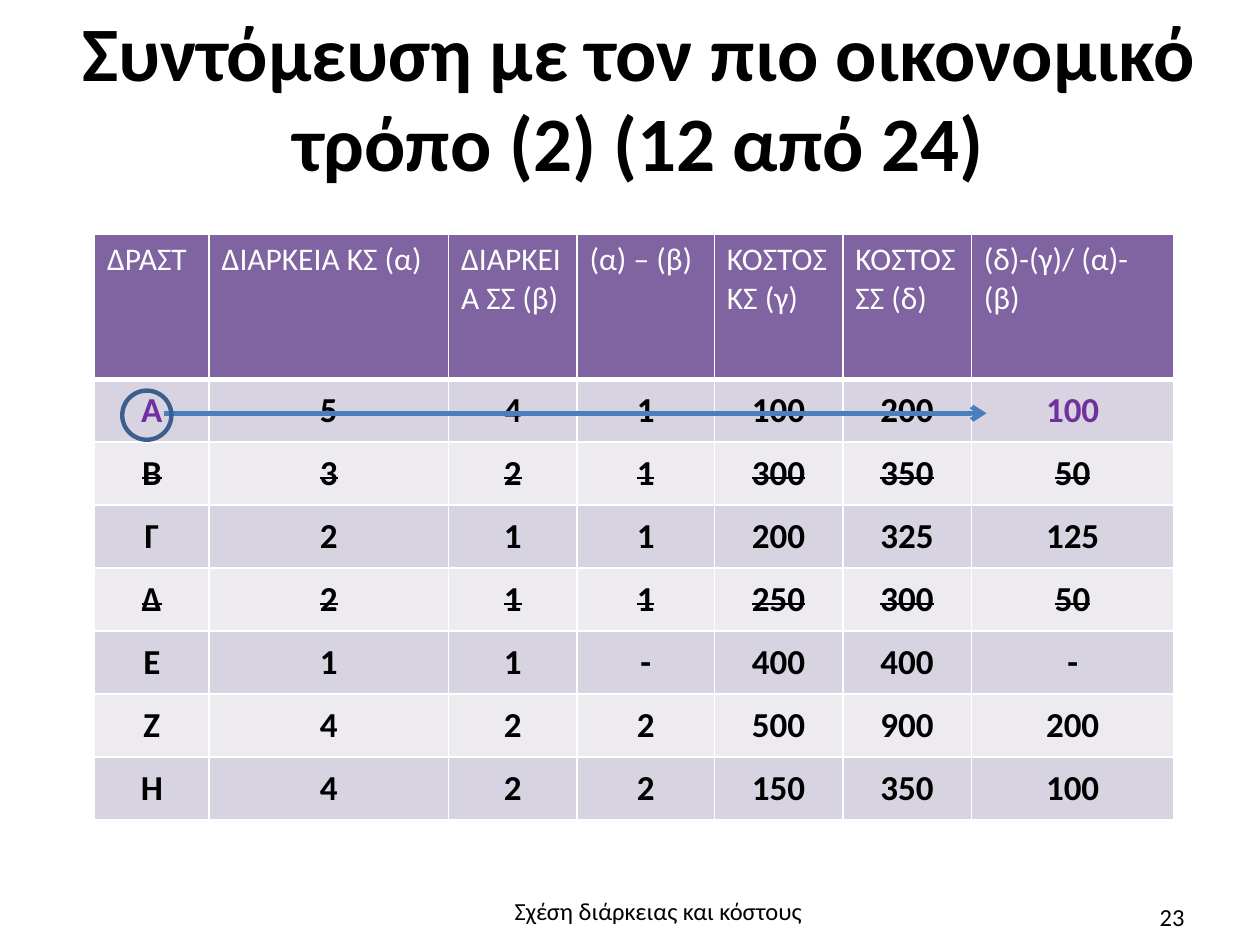
from lxml.etree import SubElement
from pptx import Presentation
from pptx.dml.color import RGBColor
from pptx.enum.shapes import MSO_CONNECTOR, MSO_SHAPE
from pptx.enum.text import MSO_ANCHOR, PP_ALIGN
from pptx.oxml.ns import qn
from pptx.util import Inches, Pt

BLACK = RGBColor(0x00, 0x00, 0x00)
WHITE = RGBColor(0xFF, 0xFF, 0xFF)
HEADER = RGBColor(0x80, 0x64, 0xA2)
BANDS = (RGBColor(0xD8, 0xD3, 0xE0), RGBColor(0xED, 0xEA, 0xF0))
ACCENT = RGBColor(0x70, 0x30, 0xA0)
ARROW = RGBColor(0x4B, 0x7E, 0xBC)
RING = RGBColor(0x3A, 0x5F, 0x8C)

COLUMNS = (0.91, 1.9, 1.02, 1.09, 1.02, 1.02, 1.61)
HEADINGS = ("ΔΡΑΣΤ", "ΔΙΑΡΚΕΙΑ ΚΣ (α)", "ΔΙΑΡΚΕΙΑ ΣΣ (β)", "(α) – (β)",
            "ΚΟΣΤΟΣ ΚΣ (γ)", "ΚΟΣΤΟΣ ΣΣ (δ)", "(δ)-(γ)/ (α)-(β)")
ACTIVITIES = (
    ("Α", "5", "4", "1", "100", "200", "100"),
    ("Β", "3", "2", "1", "300", "350", "50"),
    ("Γ", "2", "1", "1", "200", "325", "125"),
    ("Δ", "2", "1", "1", "250", "300", "50"),
    ("Ε", "1", "1", "-", "400", "400", "-"),
    ("Ζ", "4", "2", "2", "500", "900", "200"),
    ("Η", "4", "2", "2", "150", "350", "100"),
)
STRUCK = ("Β", "Δ")
CHOSEN = "Α"


def write(tf, text, size, color=BLACK, align=PP_ALIGN.LEFT, bold=False):
    p = tf.paragraphs[0]
    p.alignment = align
    r = p.add_run()
    r.text = text
    style = {"name": "Calibri", "size": Pt(size), "bold": bold}
    for key, value in style.items():
        setattr(r.font, key, value)
    r.font.color.rgb = color
    return r


def add_text(s, box, text, size, align, bold=False):
    tf = s.shapes.add_textbox(*map(Inches, box)).text_frame
    tf.word_wrap = True
    write(tf, text, size, align=align, bold=bold)
    return tf


def add_title(s, box):
    tf = add_text(s, box, "Συντόμευση με τον πιο οικονομικό τρόπο (2) (12 από 24)",
                  44, PP_ALIGN.CENTER, True)
    layout = {"vertical_anchor": MSO_ANCHOR.MIDDLE, "margin_left": 0,
              "margin_top": Inches(0.02), "margin_right": 0, "margin_bottom": 0}
    for key, value in layout.items():
        setattr(tf, key, value)
    tf.paragraphs[0].line_spacing = 0.98


def style_cell(cell, fill, bottom=1):
    # Borders come before the fill in the cell properties
    tcPr = cell._tc.get_or_add_tcPr()
    for side, width in {"L": 1, "R": 1, "T": 1, "B": bottom}.items():
        ln = SubElement(tcPr, qn(f"a:ln{side}"), w=str(Pt(width)))
        solid = SubElement(ln, qn("a:solidFill"))
        SubElement(solid, qn("a:srgbClr"), val=str(WHITE))
    cell.fill.solid()
    cell.fill.fore_color.rgb = fill


def add_activity_table(s, box):
    table = s.shapes.add_table(len(ACTIVITIES) + 1, len(COLUMNS),
                               *map(Inches, box)).table
    for column, width in zip(table.columns, COLUMNS):
        column.width = Inches(width)
    for i, row in enumerate(table.rows):
        row.height = Inches(0.5 if i else 1.15)

    # Heading row
    for j, text in enumerate(HEADINGS):
        cell = table.cell(0, j)
        style_cell(cell, HEADER, bottom=3)
        write(cell.text_frame, text, 18, WHITE)

    # Banded activity rows
    for i, values in enumerate(ACTIVITIES):
        name = values[0]
        for j, text in enumerate(values):
            cell = table.cell(i + 1, j)
            style_cell(cell, BANDS[i % 2])
            cell.vertical_anchor = MSO_ANCHOR.MIDDLE
            marked = name == CHOSEN and j in (0, len(values) - 1)
            r = write(cell.text_frame, text, 20, ACCENT if marked else BLACK,
                      PP_ALIGN.CENTER, True)
            if name in STRUCK:
                r._r.get_or_add_rPr().set("strike", "sngStrike")


def add_choice_mark(s, box):
    left, top, width, height = box
    # Arrow through the chosen row
    y = Inches(3.28)
    line = s.shapes.add_connector(MSO_CONNECTOR.STRAIGHT, Inches(1.3), y,
                                  Inches(left + width), y)
    line.line.color.rgb = ARROW
    line.line.width = Pt(2.75)
    SubElement(line.line._get_or_add_ln(), qn("a:tailEnd"), type="arrow")
    SubElement(line._element.spPr, qn("a:effectLst"))

    # Ring around the activity name
    sp = s.shapes.add_shape(MSO_SHAPE.OVAL, Inches(left), Inches(top),
                            Inches(height), Inches(height))
    sp.shadow.inherit = False
    sp.fill.background()
    sp.line.color.rgb = RING
    sp.line.width = Pt(2.5)


def add_footer(s, box):
    left, top, width, height = box
    add_text(s, (left, top, 3.49, height), "Σχέση διάρκειας και κόστους",
             14, PP_ALIGN.CENTER)
    add_text(s, (left + width - 2.33, top + 0.05, 2.33, 0.4), "23",
             14, PP_ALIGN.RIGHT)


def main():
    prs = Presentation()
    prs.slide_width, prs.slide_height = Inches(10), Inches(7.5)
    s = prs.slides.add_slide(prs.slide_layouts[6])
    add_title(s, (0.51, 0.09, 9.13, 1.38))
    add_activity_table(s, (0.75, 1.86, 8.57, 4.65))
    add_choice_mark(s, (0.97, 3.1, 6.86, 0.39))
    add_footer(s, (3.48, 7.06, 6.02, 0.55))
    prs.save("out.pptx")


if __name__ == "__main__":
    main()
